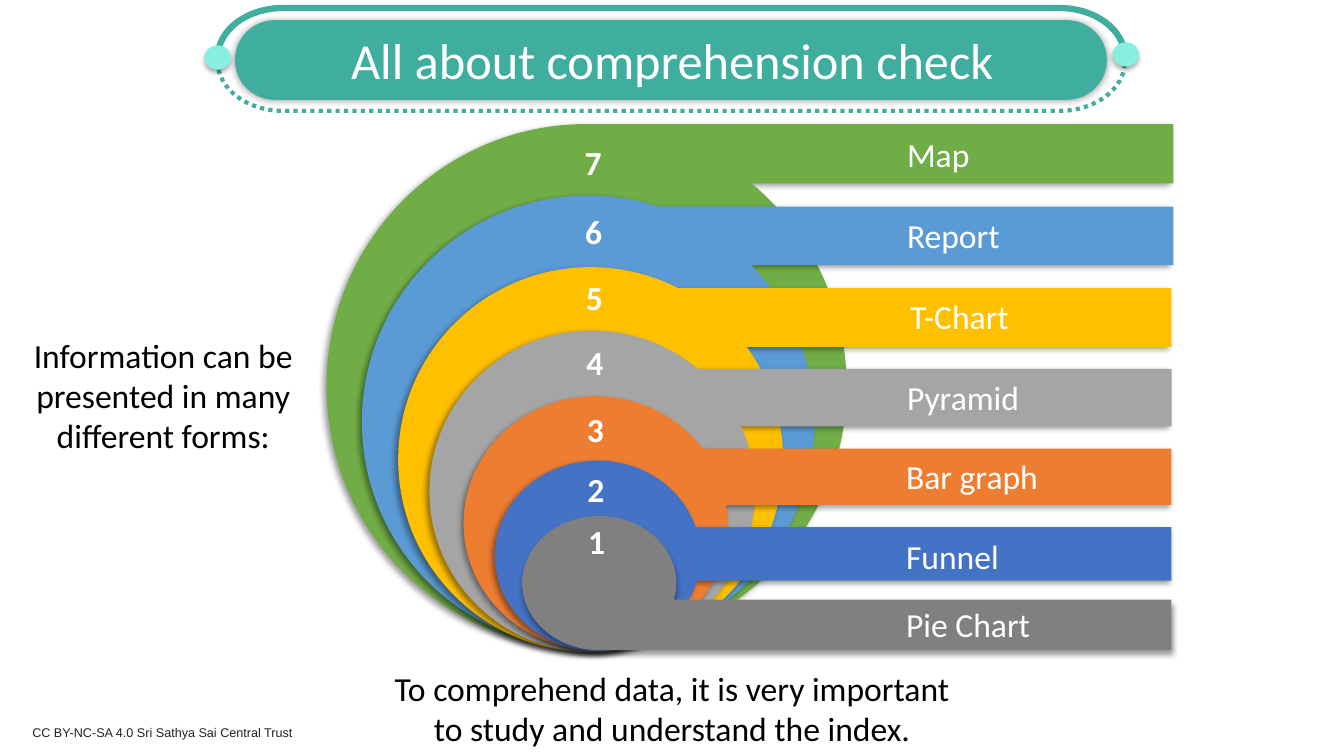
import math

import lxml.etree
import pptx
import pptx.dml.color
import pptx.enum.dml
import pptx.enum.shapes
import pptx.enum.text
import pptx.oxml.ns
import pptx.util

Pt = pptx.util.Pt
qn = pptx.oxml.ns.qn
SHAPES = pptx.enum.shapes.MSO_SHAPE
CENTER = pptx.enum.text.PP_ALIGN.CENTER
LEFT = pptx.enum.text.PP_ALIGN.LEFT
WHITE, TEAL, MINT, BLACK = "FFFFFF", "3FAE9E", "86EFE0", "000000"
QUARTER = math.pi / 2

# label, colour, circle (left, top, right, bottom), tab (top, bottom, right), label (left, top), number top
FORMS = [
    ("Map", "70AD47", (233.3, 88.6, 604.8, 463), (88.6, 131, 838.1), (640.8, 92.2), 97.9),
    ("Report", "5B9BD5", (258.5, 139.7, 581.8, 463), (147.6, 189.4, 838.1), (640.8, 149.8), 146.9),
    ("T-Chart", "FFC000", (284.4, 190.8, 559.4, 465.8), (205.9, 247.7, 836.8), (643, 208.1), 194.4),
    ("Pyramid", "A5A5A5", (306.7, 236.2, 539.3, 465.8), (263.5, 304.6, 836.8), (640.8, 265.7), 240.5),
    ("Bar graph", "ED7D31", (331.2, 283, 519.8, 464.4), (320.4, 360.7, 836.8), (640.1, 321.8), 288.7),
    ("Funnel", "4472C4", (353.5, 329, 500.4, 465.1), (376.6, 414.7, 836.8), (640.1, 379.4), 331.2),
    ("Pie Chart", "808080", (373, 368.6, 483.1, 464.4), (428.4, 464.4, 836.8), (640.1, 427.7), 368.6),
]


def color(value):
    """Return the colour for a hex string."""
    return pptx.dml.color.RGBColor.from_string(value)


def style(shape, fill, shadow=None):
    """Fill a shape without outline; shadow is opacity, blur, distance, angle."""
    shape.fill.solid()
    shape.fill.fore_color.rgb = color(fill)
    shape.line.fill.background()
    shape.shadow.inherit = False
    if shadow:
        opacity, blur, distance, angle = shadow
        effects = shape._element.spPr.find(qn("a:effectLst"))
        outer = lxml.etree.SubElement(
            effects, qn("a:outerShdw"), blurRad=str(Pt(blur)), dist=str(Pt(distance)),
            dir=str(angle * 60000), algn="ctr", rotWithShape="0")
        black = lxml.etree.SubElement(outer, qn("a:srgbClr"), val=BLACK)
        lxml.etree.SubElement(black, qn("a:alpha"), val=str(opacity * 1000))


def arc(center_x, center_y, radius_x, radius_y, start, end):
    """Return the Bezier segments of an elliptic arc, split at its quadrants."""
    def place(angle, pull=0.0):
        """Return the point at an angle, moved along the tangent."""
        return (center_x + radius_x * (math.cos(angle) - pull * math.sin(angle)),
                center_y + radius_y * (math.sin(angle) + pull * math.cos(angle)))

    margin = 0.001
    first, last = math.floor(start / QUARTER + margin) + 1, math.ceil(end / QUARTER - margin)
    stops = [start, *(step * QUARTER for step in range(first, last)), end]
    segments = []
    for a, b in zip(stops, stops[1:]):
        pull = 4 / 3 * math.tan((b - a) / 4)
        segments.append([place(a, pull), place(b, -pull), place(b)])
    return place(start), segments


def add_outline(slide, start, segments, close=True):
    """Add an outline of lines (one point) and curves (three points)."""
    builder = slide.shapes.build_freeform(*map(Pt, start))
    builder.add_line_segments([(Pt(x), Pt(y)) for segment in segments for x, y in segment], close=close)
    shape = builder.convert_to_shape()
    steps = iter(list(shape._element.iter(qn("a:lnTo"))))
    for segment in segments:
        group = [next(steps) for _ in segment]
        if len(group) == 3:
            curve = lxml.etree.Element(qn("a:cubicBezTo"))
            group[0].addprevious(curve)
            for step in group:
                curve.append(step[0])
                step.getparent().remove(step)
    return shape


def add_preset(slide, kind, box, fill, shadow=None):
    """Add a filled preset shape."""
    shape = slide.shapes.add_shape(kind, *map(Pt, box))
    style(shape, fill, shadow)
    return shape


def add_text(slide, text, box, size, ink, align=CENTER, bold=False, font="Calibri", inset=7.2):
    """Add one paragraph of wrapped text."""
    frame = slide.shapes.add_textbox(*map(Pt, box)).text_frame
    frame.word_wrap = True
    frame.margin_left = frame.margin_right = Pt(inset)
    paragraph = frame.paragraphs[0]
    paragraph.text = text
    paragraph.alignment = align
    paragraph.font.name = font
    paragraph.font.size = Pt(size)
    paragraph.font.bold = bold
    paragraph.font.color.rgb = color(ink)


def add_half_frame(slide, base, rise, weight, dash=None):
    """Add half of the banner frame, rising (or falling) from its base."""
    left, right, radius = 155.5, 803.5, 46.8
    start, left_curve = arc(left + radius, base, radius, rise, 2 * QUARTER, 3 * QUARTER)
    corner, right_curve = arc(right - radius, base, radius, rise, 3 * QUARTER, 4 * QUARTER)
    half = add_outline(slide, start, left_curve + [[corner]] + right_curve, close=False)
    style(half, WHITE)
    half.line.color.rgb = color(TEAL)
    half.line.width = Pt(weight)
    if dash:
        half.line.dash_style = dash


def add_banner(slide):
    """Add the title with its frame and knobs."""
    add_half_frame(slide, 41, 35.3, 4.5)
    add_half_frame(slide, 43.9, -35.3, 3, pptx.enum.dml.MSO_LINE.ROUND_DOT)
    for box, fill, shadow in [
        ((159.8, 11.5, 634.3, 58.3), WHITE, None),
        ((167.8, 14.4, 622.8, 56.9), TEAL, (40, 5, 0, 0)),
    ]:
        pill = add_preset(slide, SHAPES.ROUNDED_RECTANGLE, box, fill, shadow)
        pill.adjustments[0] = 0.5
    for left, top in [(794.9, 30.2), (146.2, 32.4)]:
        add_preset(slide, SHAPES.OVAL, (left, top, 18.7, 17.3), MINT, (32, 3.5, 2.2, 90))
    add_text(slide, "All about comprehension check", (185.8, 17.3, 589, 51.1), 36, WHITE)


def add_form(slide, number, label, fill, circle, tab, label_at, number_top):
    """Add a numbered circle with its tab and label."""
    left, top, right, bottom = circle
    tab_top, tab_bottom, tab_right = tab
    center_x, center_y = (left + right) / 2, (top + bottom) / 2
    radius_x, radius_y = (right - left) / 2, (bottom - top) / 2
    upper, lower = [math.asin(max(-1, min(1, (y - center_y) / radius_y))) for y in (tab_top, tab_bottom)]
    start, curves = arc(center_x, center_y, radius_x, radius_y, lower, upper + 4 * QUARTER)
    tab_ends = [[(tab_right, tab_top)], [(tab_right, tab_bottom)]]
    shadow = (40, 4, 3, 90 if number == 1 else 135)
    style(add_outline(slide, start, curves + tab_ends), fill, shadow)
    add_text(slide, label, (*label_at, 190, 36), 24, WHITE, LEFT)
    add_text(slide, str(number), (412.5 - 0.4 * number, number_top, 28, 36), 24, WHITE, bold=True, inset=0)


def main():
    """Build the slide and save it."""
    deck = pptx.Presentation()
    deck.slide_width, deck.slide_height = Pt(960), Pt(540)
    slide = deck.slides.add_slide(deck.slide_layouts[6])
    add_text(slide, "CC BY-NC-SA 4.0 Sri Sathya Sai Central Trust", (16, 514.1, 480, 18),
             9, "222222", LEFT, font="Arial")
    add_banner(slide)
    for index, form in enumerate(FORMS):
        add_form(slide, len(FORMS) - index, *form)
    add_text(slide, "Information can be presented in many different forms:", (7.5, 235.4, 218.2, 94.3), 24, BLACK)
    add_text(slide, "To comprehend data, it is very important to study and understand the index.",
             (270.5, 473.4, 419, 65.5), 24, BLACK)
    deck.save("out.pptx")


if __name__ == "__main__":
    main()
